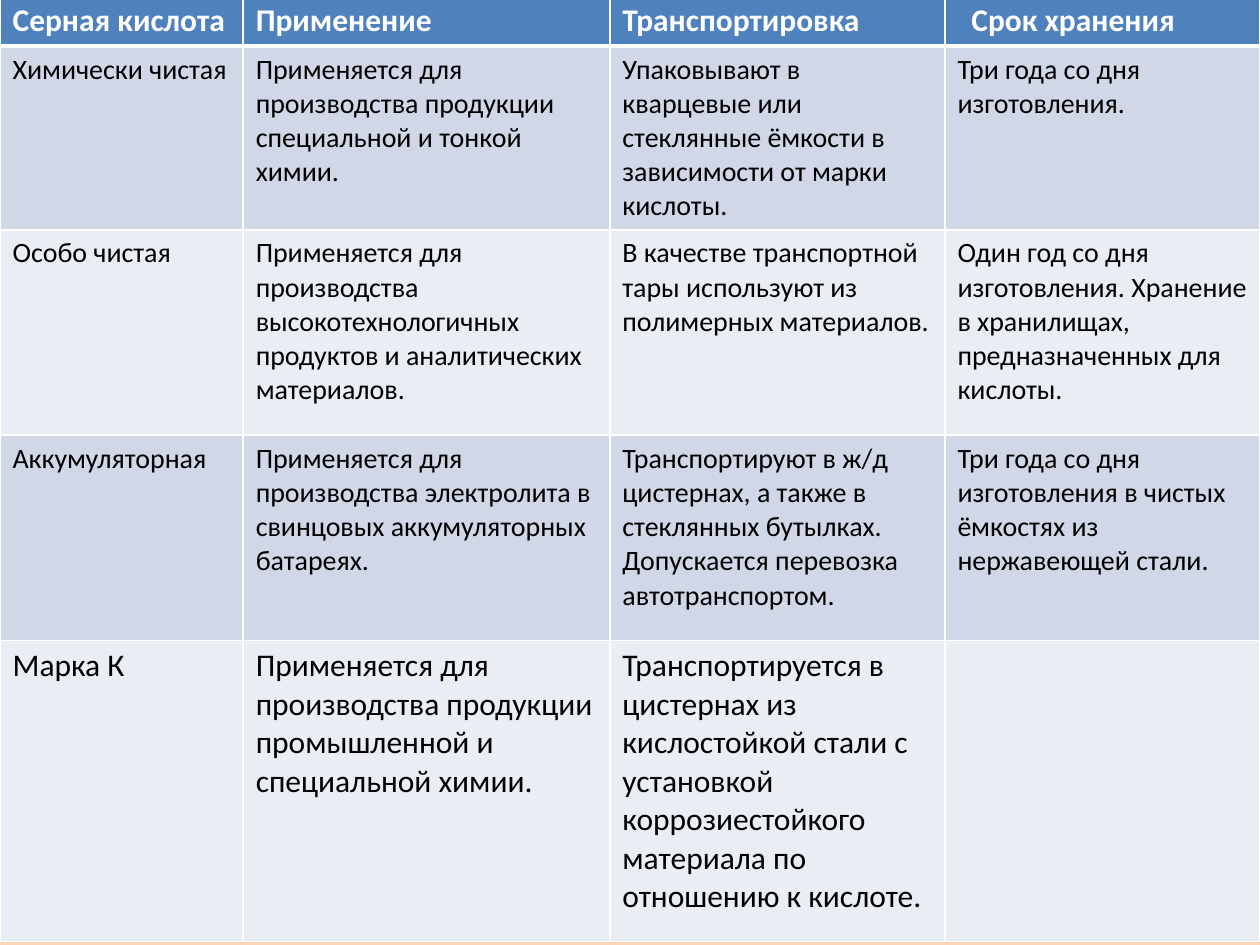
from dataclasses import dataclass

from lxml.etree import SubElement
from pptx import Presentation
from pptx.dml.color import RGBColor
from pptx.oxml.ns import qn
from pptx.util import Inches, Pt

COLORS = {
    "header": "4F81BD", "odd": "D0D8E8", "even": "E9EDF4",
    "white": "FFFFFF", "black": "000000",
    "sky": "B7DEE8", "green": "00B050", "peach": "FCD5B5",
}
BACKGROUND_STOPS = [(0, "sky"), (50, "green"), (96, "peach"), (100, "peach")]
WIDTH, HEIGHT = 10, 7.5
TABLE_TOP = -0.04
COLUMN_SHARES = [0.193, 0.291, 0.266, 0.25]


@dataclass
class AcidRow:
    height: float
    fill: str
    texts: list[str]
    size: int = 16
    color: str = "black"
    bold: bool = False
    top_border: int = 1
    bottom_border: int = 1


ROWS = [
    AcidRow(0.38, "header",
            ["Серная кислота", "Применение", "Транспортировка", "Срок хранения"],
            size=18, color="white", bold=True, bottom_border=3),
    AcidRow(1.37, "odd",
            ["Химически чистая",
             "Применяется для производства продукции специальной и тонкой химии.",
             "Упаковывают в кварцевые или стеклянные ёмкости в зависимости от марки кислоты.",
             "Три года со дня изготовления."], top_border=3),
    AcidRow(1.63, "even",
            ["Особо чистая",
             "Применяется для производства высокотехнологичных продуктов и аналитических материалов.",
             "В качестве транспортной тары используют из полимерных материалов.",
             "Один год со дня изготовления. Хранение в хранилищах, предназначенных для кислоты."]),
    AcidRow(1.63, "odd",
            ["Аккумуляторная",
             "Применяется для производства электролита в свинцовых аккумуляторных батареях.",
             "Транспортируют в ж/д цистернах, а также в стеклянных бутылках. "
             "Допускается перевозка автотранспортом.",
             "Три года со дня изготовления в чистых ёмкостях из нержавеющей стали."]),
    AcidRow(2.39, "even",
            ["Марка К",
             "Применяется для производства продукции промышленной и специальной химии.",
             "Транспортируется в цистернах из кислостойкой стали с установкой "
             "коррозиестойкого материала по отношению к кислоте.",
             ""], size=18),
]


def paint_background(slide) -> None:
    fill = slide.background.fill
    fill.gradient()
    fill.gradient_angle = 270
    stop_list = next(slide.element.iter(qn("a:gsLst")))
    for stop in list(stop_list):
        stop_list.remove(stop)
    for percent, color in BACKGROUND_STOPS:
        stop = SubElement(stop_list, qn("a:gs"), pos=str(percent * 1000))
        SubElement(stop, qn("a:srgbClr"), val=COLORS[color])


def write_text(cell, text: str, *, size: int, color: str, bold: bool) -> None:
    paragraph = cell.text_frame.paragraphs[0]
    paragraph.font.size = Pt(size)
    if not text:
        return
    run = paragraph.add_run()
    run.text = text
    run.font.name = "Calibri"
    run.font.size = Pt(size)
    run.font.bold = bold
    run.font.color.rgb = RGBColor.from_string(COLORS[color])


def add_borders(cell, top: int, bottom: int) -> None:
    properties = cell._tc.get_or_add_tcPr()
    for side, width in (("L", 1), ("R", 1), ("T", top), ("B", bottom)):
        line = SubElement(properties, qn(f"a:ln{side}"), w=str(Pt(width)))
        line_fill = SubElement(line, qn("a:solidFill"))
        SubElement(line_fill, qn("a:srgbClr"), val=COLORS["white"])


def add_acid_table(slide) -> None:
    frame = slide.shapes.add_table(
        len(ROWS), len(COLUMN_SHARES), 0, Inches(TABLE_TOP),
        Inches(WIDTH), Inches(sum(row.height for row in ROWS)))
    table = frame.table
    for column, share in zip(table.columns, COLUMN_SHARES):
        column.width = Inches(WIDTH * share)
    for table_row, row in zip(table.rows, ROWS):
        table_row.height = Inches(row.height)
        for cell, text in zip(table_row.cells, row.texts):
            # Borders come before the fill in the cell properties
            add_borders(cell, row.top_border, row.bottom_border)
            cell.fill.solid()
            cell.fill.fore_color.rgb = RGBColor.from_string(COLORS[row.fill])
            write_text(cell, text, size=row.size, color=row.color, bold=row.bold)
    # The last heading is set in a little
    table.cell(0, len(COLUMN_SHARES) - 1).margin_left = Inches(0.21)


def main() -> None:
    presentation = Presentation()
    presentation.slide_width = Inches(WIDTH)
    presentation.slide_height = Inches(HEIGHT)
    slide = presentation.slides.add_slide(presentation.slide_layouts[6])
    paint_background(slide)
    add_acid_table(slide)
    presentation.save("out.pptx")


if __name__ == "__main__":
    main()
